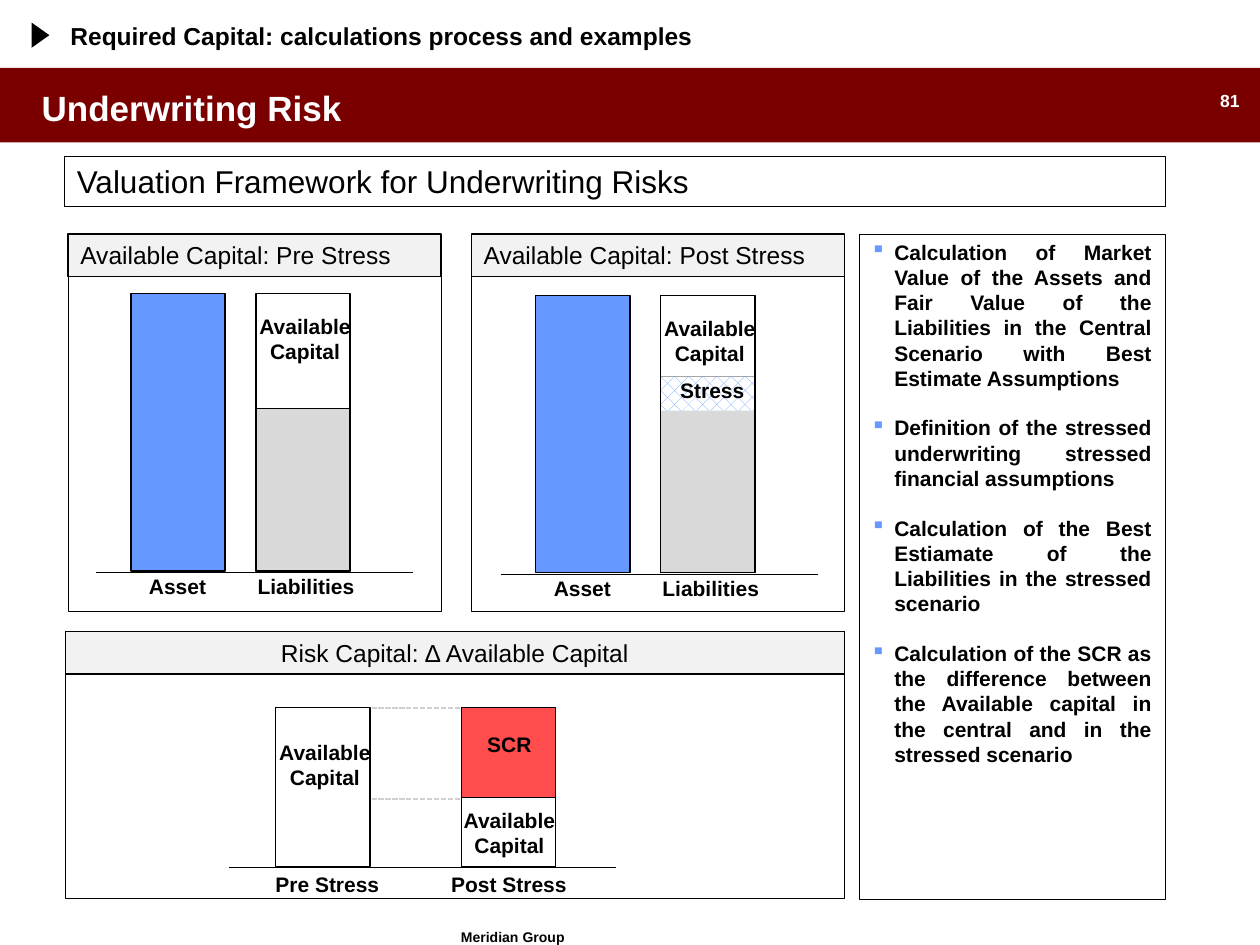
from dataclasses import dataclass
from typing import Optional

from lxml import etree
from pptx import Presentation
from pptx.dml.color import RGBColor as Rgb
from pptx.enum.dml import MSO_LINE as Dash, MSO_PATTERN as Hatch
from pptx.enum.shapes import MSO_CONNECTOR as Link, MSO_SHAPE as Form
from pptx.enum.text import MSO_ANCHOR as Anchor, PP_ALIGN as Align
from pptx.oxml.ns import qn
from pptx.util import Cm, Pt


@dataclass(frozen=True)
class Theme:
    font: str = "Arial"
    black: str = "000000"
    white: str = "FFFFFF"
    maroon: str = "7A0000"
    blue: str = "6699FF"
    grey: str = "D9D9D9"
    pale: str = "F2F2F2"
    red: str = "FF0000"
    dash: str = "D0D0D0"
    title: int = 20
    lead: int = 18
    head: int = 14
    body: int = 12
    page: int = 10
    foot: int = 8
    thin: float = 0.25
    edge: float = 0.75


@dataclass(frozen=True)
class Box:
    x: float
    y: float
    w: float
    h: float


@dataclass(frozen=True)
class Panel:
    title: str
    x: float
    bar_x: float
    top: float
    debt_y: float
    stress: float = 0


@dataclass(frozen=True)
class Label:
    text: str
    x: float
    y: float
    w: float = 4.06


LOOK = Theme()
BAR = 1.9
CAPITAL = "Available\nCapital"
PANELS = [
    Panel("Available Capital: Pre Stress", 1.37, 2.64, 5.92, 8.23),
    Panel("Available Capital: Post Stress", 9.5, 10.8, 5.96, 7.59, 0.69),
]
LABELS = [
    Label("Pre Stress", 4.57, 17.45),
    Label("Post Stress", 8.23, 17.45),
    Label(CAPITAL, 5.28, 14.78, 2.54),
    Label(CAPITAL, 9, 16.15, 2.54),
    Label("SCR", 9, 14.63, 2.54),
]
STEPS = [
    "Calculation of Market Value of the Assets and Fair Value of the "
    "Liabilities in the Central Scenario with Best Estimate Assumptions",
    "Definition of the stressed underwriting stressed financial assumptions",
    "Calculation of the Best Estiamate of the Liabilities in the stressed scenario",
    "Calculation of the SCR as the difference between the Available capital "
    "in the central and in the stressed scenario",
]


def write(shape, text: str, size: int = LOOK.body, bold: bool = True,
          color: str = LOOK.black, align=Align.LEFT, anchor=Anchor.TOP,
          inset: bool = True, bullet: str = "", gap: int = 0) -> None:
    frame = shape.text_frame
    frame.word_wrap = True
    frame.vertical_anchor = anchor
    if not inset:
        frame.margin_left = frame.margin_right = 0
        frame.margin_top = frame.margin_bottom = 0
    for i, line in enumerate(text.split("\n")):
        para = frame.add_paragraph() if i else frame.paragraphs[0]
        if bullet:
            mark(para, bullet)
        para.alignment = align
        if i and gap:
            para.space_before = Pt(gap)
        run = para.add_run()
        run.text = line
        run.font.name = LOOK.font
        run.font.size = Pt(size)
        run.font.bold = bold
        run.font.color.rgb = Rgb.from_string(color)


def mark(para, sign: str) -> None:
    props = para._p.get_or_add_pPr()
    props.set("marL", str(Cm(0.48)))
    props.set("indent", str(-Cm(0.48)))
    tint = etree.SubElement(props, qn("a:buClr"))
    etree.SubElement(tint, qn("a:srgbClr"), val=LOOK.blue)
    etree.SubElement(props, qn("a:buChar"), char=sign)


def block(page, box: Box, fill: Optional[str] = None,
          edge: float = 0, form=Form.RECTANGLE):
    shape = page.shapes.add_shape(form, Cm(box.x), Cm(box.y), Cm(box.w), Cm(box.h))
    shape.shadow.inherit = False
    if fill:
        shape.fill.solid()
        shape.fill.fore_color.rgb = Rgb.from_string(fill)
    else:
        shape.fill.background()
    if edge:
        shape.line.width = Pt(edge)
        shape.line.color.rgb = Rgb.from_string(LOOK.black)
    else:
        shape.line.fill.background()
    return shape


def note(page, box: Box, text: str, **style) -> None:
    area = page.shapes.add_textbox(Cm(box.x), Cm(box.y), Cm(box.w), Cm(box.h))
    write(area, text, **style)


def tag(page, label: Label) -> None:
    rows = label.text.count("\n") + 1
    box = Box(label.x, label.y, label.w, 0.25 + 0.52 * rows)
    note(page, box, label.text, align=Align.CENTER)


def rule(page, x: float, end: float, y: float, dashed: bool = False) -> None:
    line = page.shapes.add_connector(Link.STRAIGHT, Cm(x), Cm(y), Cm(end), Cm(y))
    line.line.width = Pt(1 if dashed else LOOK.thin)
    line.line.color.rgb = Rgb.from_string(LOOK.dash if dashed else LOOK.black)
    if dashed:
        line.line.dash_style = Dash.SQUARE_DOT
    etree.SubElement(line._element.spPr, qn("a:effectLst"))


def header(page, box: Box, text: str, align=Align.LEFT) -> None:
    write(block(page, box, LOOK.pale, LOOK.edge), text, size=LOOK.head,
          bold=False, align=align)


def panel(page, item: Panel) -> None:
    tall = 5.59
    base = item.top + tall
    debt_x = item.bar_x + 2.52
    block(page, Box(item.x, 5.57, 7.52, 6.76), edge=LOOK.thin)
    header(page, Box(item.x, 4.72, 7.52, 0.86), item.title)
    rule(page, item.bar_x - 0.71, item.bar_x + 5.69, base + 0.03)
    block(page, Box(item.bar_x, item.top, BAR, tall), LOOK.blue, LOOK.edge)
    block(page, Box(debt_x, item.debt_y, BAR, base - item.debt_y), LOOK.grey, LOOK.edge)
    if item.stress:
        zone = block(page, Box(debt_x, item.debt_y, BAR, item.stress))
        zone.fill.patterned()
        zone.fill.pattern = Hatch.PERCENT_25
        zone.fill.fore_color.rgb = Rgb.from_string(LOOK.blue)
        zone.fill.back_color.rgb = Rgb.from_string(LOOK.white)
        tag(page, Label("Stress", debt_x - 0.23, item.debt_y - 0.1, 2.54))
    block(page, Box(debt_x, item.top, BAR, tall), edge=LOOK.edge)
    tag(page, Label("Asset", item.bar_x - 1.09, base - 0.08))
    tag(page, Label("Liabilities", item.bar_x + 1.5, base - 0.08))
    tag(page, Label(CAPITAL, debt_x - 0.28, item.top + 0.27, 2.54))


def risk(page) -> None:
    block(page, Box(1.32, 12.73, 15.7, 5.38), edge=LOOK.thin)
    header(page, Box(1.32, 12.73, 15.7, 0.86),
           "Risk Capital: ∆ Available Capital", Align.CENTER)
    rule(page, 4.62, 12.42, 17.48)
    block(page, Box(5.56, 14.27, BAR, 3.2), LOOK.white, LOOK.edge)
    loss = block(page, Box(9.3, 14.27, BAR, 3.2), LOOK.red, LOOK.edge)
    tint = loss._element.spPr.find(qn("a:solidFill")).find(qn("a:srgbClr"))
    etree.SubElement(tint, qn("a:alpha"), val="70000")
    block(page, Box(9.3, 16.08, BAR, 1.39), LOOK.white, LOOK.edge)
    for y in (14.27, 16.1):
        rule(page, 7.49, 9.3, y, dashed=True)
    for label in LABELS:
        tag(page, label)


def frame(page) -> None:
    block(page, Box(0, 1.37, 25.4, 1.5), LOOK.maroon)
    write(block(page, Box(23.77, 1.7, 1.47, 0.84), LOOK.maroon), "81",
          size=LOOK.page, color=LOOK.white, align=Align.RIGHT)
    note(page, Box(0, 17.86, 20.68, 1.32), "Meridian Group", size=LOOK.foot,
         align=Align.CENTER, anchor=Anchor.BOTTOM)
    note(page, Box(0.84, 1.45, 20.6, 1.14), "Underwriting Risk", size=LOOK.title,
         color=LOOK.white, anchor=Anchor.BOTTOM, inset=False)
    arrow = block(page, Box(0.56, 0.53, 0.51, 0.36), LOOK.black, form=Form.ISOSCELES_TRIANGLE)
    arrow.rotation = 90
    note(page, Box(1.42, 0.43, 21.59, 0.99),
         "Required Capital: calculations process and examples",
         size=LOOK.head, inset=False)
    write(block(page, Box(1.3, 3.15, 22.2, 1.02), edge=LOOK.edge),
          "Valuation Framework for Underwriting Risks", size=LOOK.lead, bold=False)


def main() -> None:
    deck = Presentation()
    deck.slide_width, deck.slide_height = Cm(25.4), Cm(19.05)
    page = deck.slides.add_slide(deck.slide_layouts[6])
    frame(page)
    for item in PANELS:
        panel(page, item)
    risk(page)
    block(page, Box(17.32, 4.72, 6.17, 13.41), edge=LOOK.thin)
    note(page, Box(17.3, 4.7, 6.17, 11.02), "\n".join(STEPS),
         align=Align.JUSTIFY, bullet="▪", gap=14)
    deck.save("out.pptx")


if __name__ == "__main__":
    main()
